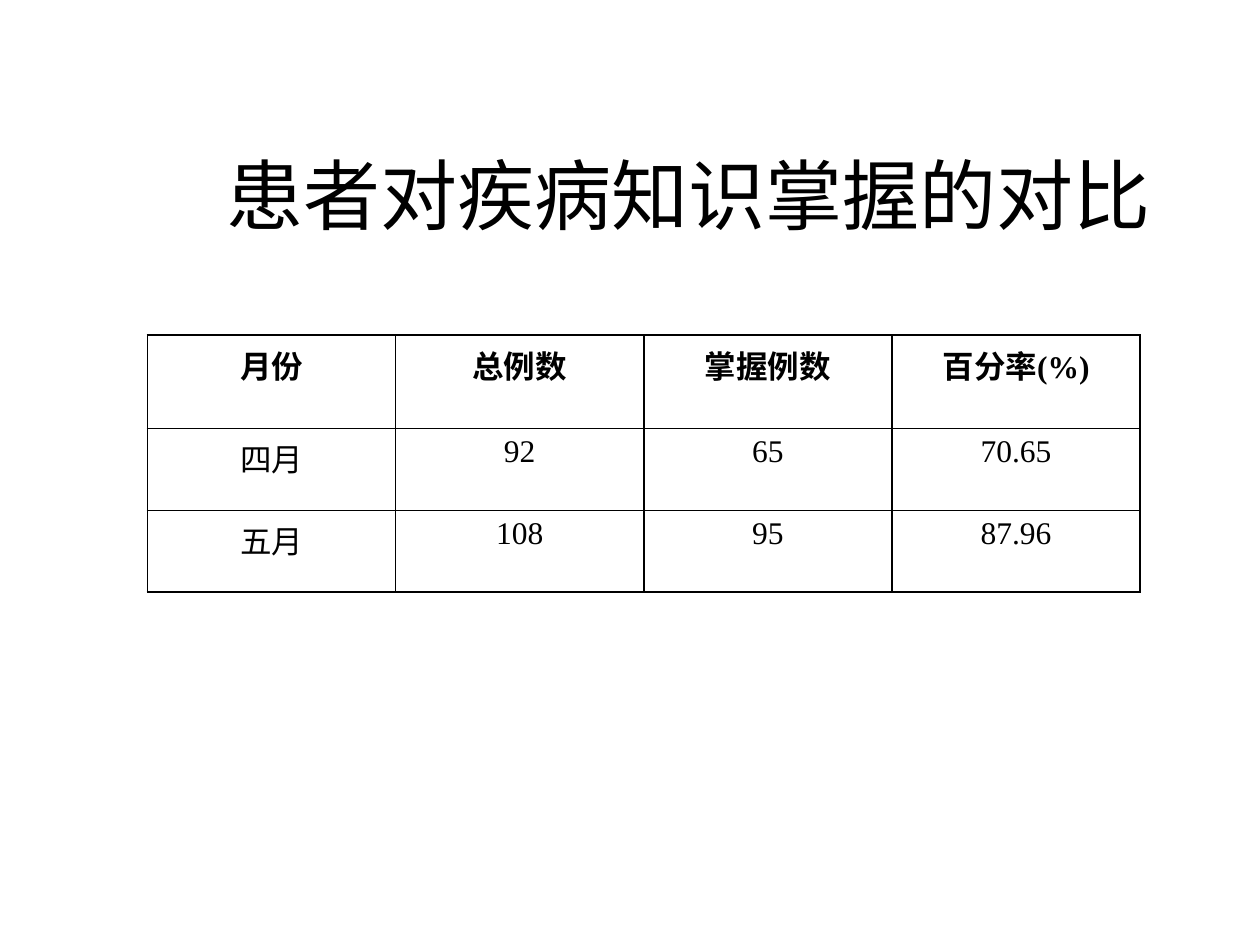
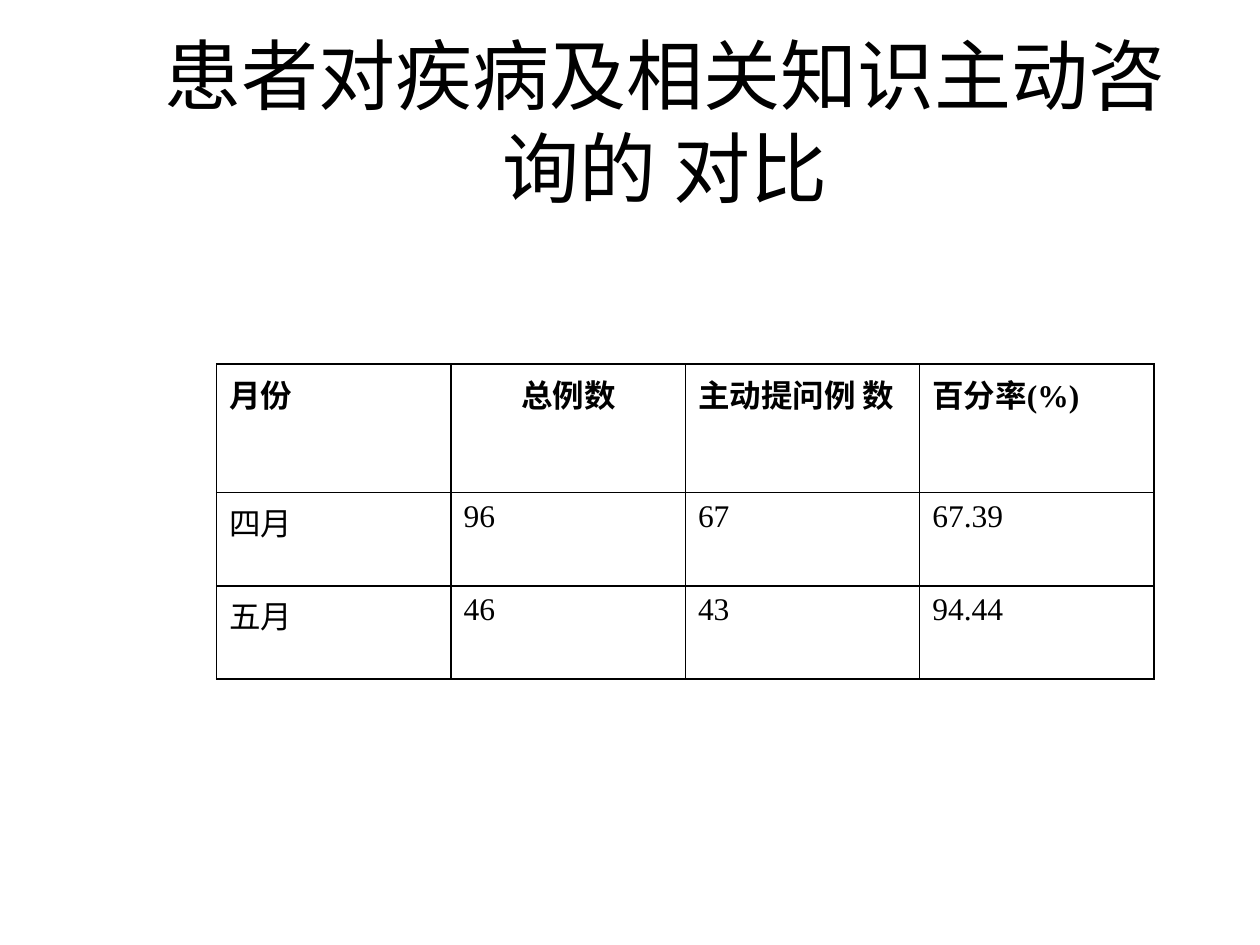
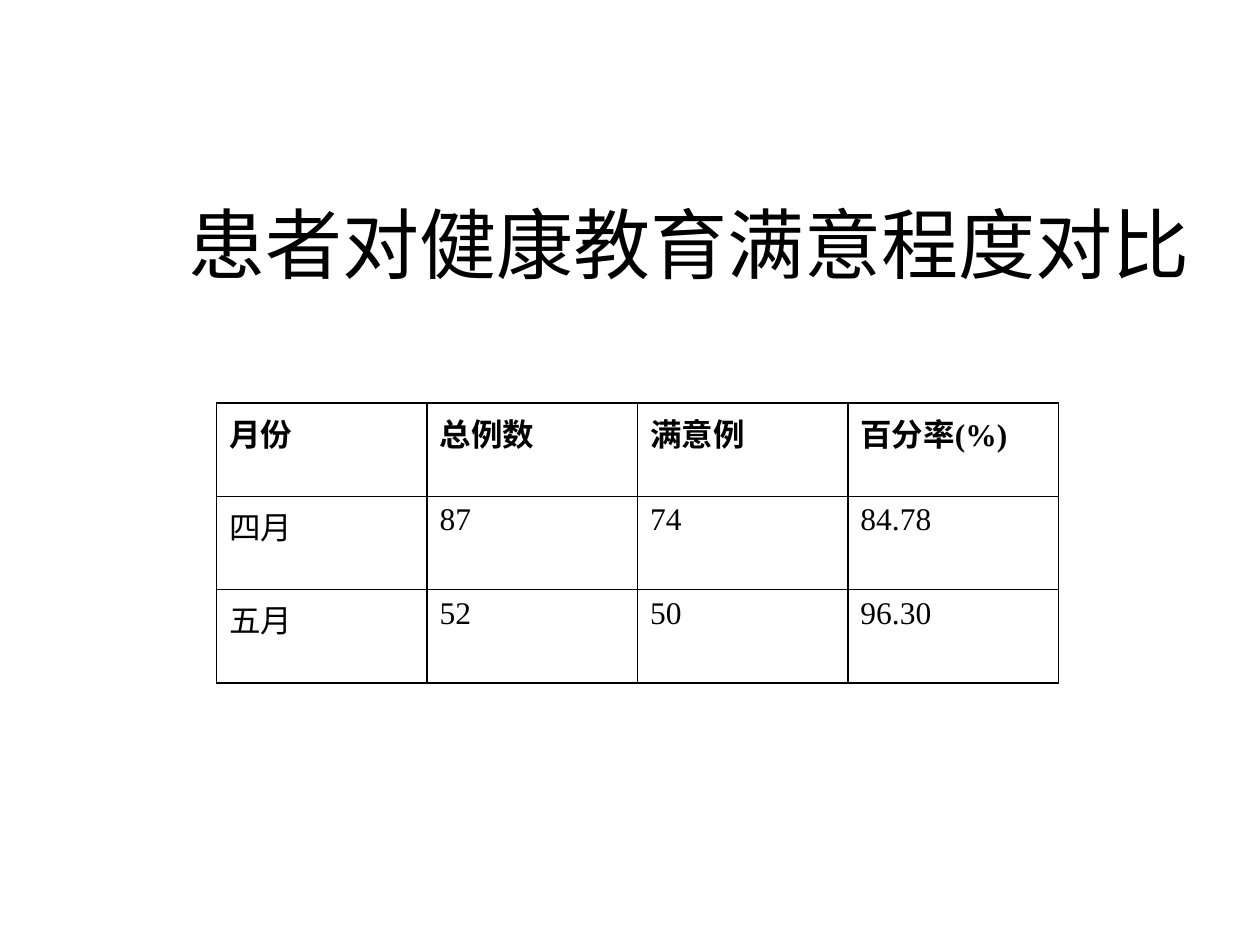
from dataclasses import dataclass

from lxml import etree
from pptx import Presentation
from pptx.dml.color import RGBColor
from pptx.enum.text import MSO_ANCHOR, PP_ALIGN
from pptx.oxml.ns import qn
from pptx.presentation import Presentation as Deck
from pptx.slide import Slide
from pptx.table import _Cell
from pptx.text.text import _Paragraph
from pptx.util import Inches, Pt

BLACK = RGBColor(0x00, 0x00, 0x00)
WHITE = RGBColor(0xFF, 0xFF, 0xFF)
FONT = "Times New Roman"
TITLE_SIZE = Pt(44)
CELL_SIZE = Pt(18)
BORDER_WIDTH = Pt(1)
LEFT = PP_ALIGN.LEFT
CENTER = PP_ALIGN.CENTER
MIDDLE = MSO_ANCHOR.MIDDLE
BLANK_LAYOUT = 6
MONTH_HEADING = "月份"
TOTAL_HEADING = "总例数"
RATE_HEADING = "百分率(%)"
MONTHS = ("四月", "五月")


@dataclass(frozen=True)
class Comparison:
    title: str
    title_left: float
    title_top: float
    counted_heading: str
    results: tuple[tuple[str, str, str], ...]
    table_left: float
    table_top: float
    column_width: float
    header_height: float
    row_height: float
    alignment: PP_ALIGN
    total_alignment: PP_ALIGN

    def rows(self) -> list[tuple[str, ...]]:
        header = (MONTH_HEADING, TOTAL_HEADING, self.counted_heading, RATE_HEADING)
        return [header, *((month, *result) for month, result in zip(MONTHS, self.results))]


COMPARISONS = (
    Comparison("患者对疾病知识掌握的对比", 1.25, 0.94, "掌握例数",
               (("92", "65", "70.65"), ("108", "95", "87.96")),
               1.17, 2.66, 1.97, 0.74, 0.65, CENTER, CENTER),
    Comparison("患者对疾病及相关知识主动咨询的 对比", 1.06, 0.36, "主动提问例 数",
               (("96", "67", "67.39"), ("46", "43", "94.44")),
               1.72, 2.89, 1.86, 1.02, 0.74, LEFT, CENTER),
    Comparison("患者对健康教育满意程度对比", 1.25, 1.33, "满意例",
               (("87", "74", "84.78"), ("52", "50", "96.30")),
               1.72, 3.2, 1.67, 0.74, 0.74, LEFT, LEFT),
)


def style_paragraph(para: _Paragraph, size: Pt, alignment: PP_ALIGN, bold: bool = False) -> None:
    para.alignment = alignment
    para.font.name = FONT
    para.font.size = size
    para.font.bold = bold
    para.font.color.rgb = BLACK


def add_title(page: Slide, comparison: Comparison) -> None:
    box = page.shapes.add_textbox(Inches(comparison.title_left), Inches(comparison.title_top),
                                  Inches(8.44), Inches(1.19))
    frame = box.text_frame
    frame.word_wrap = True
    frame.vertical_anchor = MIDDLE
    frame.text = comparison.title
    style_paragraph(frame.paragraphs[0], TITLE_SIZE, CENTER)


def add_borders(cell: _Cell) -> None:
    properties = cell._tc.get_or_add_tcPr()
    for position, side in enumerate(("a:lnL", "a:lnR", "a:lnT", "a:lnB")):
        line = etree.Element(qn(side), w=str(BORDER_WIDTH))
        fill = etree.SubElement(line, qn("a:solidFill"))
        etree.SubElement(fill, qn("a:srgbClr"), val=str(BLACK))
        properties.insert(position, line)


def add_comparison_table(page: Slide, comparison: Comparison) -> None:
    rows = comparison.rows()
    column_count = len(rows[0])
    heights = [comparison.header_height] + [comparison.row_height] * len(MONTHS)
    table = page.shapes.add_table(
        len(rows), column_count, Inches(comparison.table_left), Inches(comparison.table_top),
        Inches(comparison.column_width * column_count), Inches(sum(heights))).table
    for column in table.columns:
        column.width = Inches(comparison.column_width)
    for row_index, (texts, height) in enumerate(zip(rows, heights)):
        table.rows[row_index].height = Inches(height)
        is_header = row_index == 0
        for column_index, text in enumerate(texts):
            cell = table.cell(row_index, column_index)
            cell.text = text
            cell.fill.solid()
            cell.fill.fore_color.rgb = WHITE
            is_total_heading = is_header and text == TOTAL_HEADING
            alignment = comparison.total_alignment if is_total_heading else comparison.alignment
            style_paragraph(cell.text_frame.paragraphs[0], CELL_SIZE, alignment, is_header)
            add_borders(cell)


def add_comparison(deck: Deck, comparison: Comparison) -> None:
    page = deck.slides.add_slide(deck.slide_layouts[BLANK_LAYOUT])
    add_title(page, comparison)
    add_comparison_table(page, comparison)


def main() -> None:
    deck = Presentation()
    deck.slide_width = Inches(10)
    deck.slide_height = Inches(7.5)
    for comparison in COMPARISONS:
        add_comparison(deck, comparison)
    deck.save("out.pptx")


if __name__ == "__main__":
    main()
